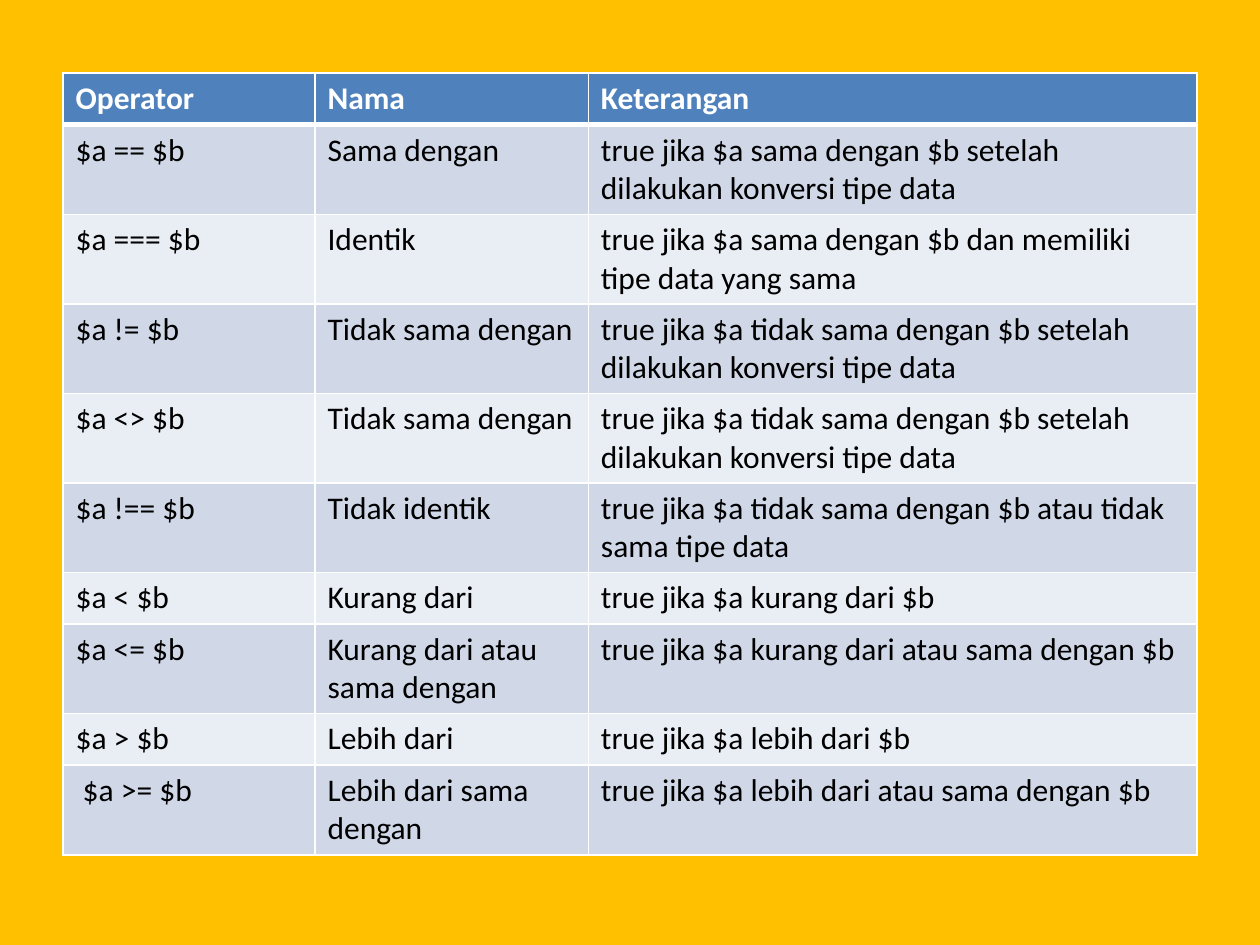
from lxml import etree
from pptx import Presentation
from pptx import util as u
from pptx.dml.color import RGBColor
from pptx.oxml.ns import qn

HEADER = ("Operator", "Nama", "Keterangan")
OPERATORS = [
    ("$a == $b", "Sama dengan", "true jika $a sama dengan $b setelah dilakukan konversi tipe data"),
    ("$a === $b", "Identik", "true jika $a sama dengan $b dan memiliki tipe data yang sama"),
    ("$a != $b", "Tidak sama dengan",
     "true jika $a tidak sama dengan $b setelah dilakukan konversi tipe data"),
    ("$a <> $b", "Tidak sama dengan",
     "true jika $a tidak sama dengan $b setelah dilakukan konversi tipe data"),
    ("$a !== $b", "Tidak identik", "true jika $a tidak sama dengan $b atau tidak sama tipe data"),
    ("$a < $b", "Kurang dari", "true jika $a kurang dari $b"),
    ("$a <= $b", "Kurang dari atau sama dengan", "true jika $a kurang dari atau sama dengan $b"),
    ("$a > $b", "Lebih dari", "true jika $a lebih dari $b"),
    (" $a >= $b", "Lebih dari sama dengan", "true jika $a lebih dari atau sama dengan $b"),
]

AMBER = RGBColor(0xFF, 0xC0, 0x00)
BLUE = RGBColor(0x4F, 0x81, 0xBD)
BANDS = (RGBColor(0xD0, 0xD8, 0xE8), RGBColor(0xE9, 0xED, 0xF4))
WHITE = RGBColor(0xFF, 0xFF, 0xFF)
BLACK = RGBColor(0x00, 0x00, 0x00)

LEFT, TOP = 0.5, 0.58
COLUMNS = (2, 2.17, 4.83)
ROW_HEIGHT = 0.41


def set_borders(cell, color, **widths):
    """Draw the cell's edges; widths maps L, R, T, B to points."""
    tc_pr = cell._tc.get_or_add_tcPr()
    for side, width in widths.items():
        ln = etree.SubElement(tc_pr, qn(f"a:ln{side}"), w=str(u.Pt(width)))
        fill = etree.SubElement(ln, qn("a:solidFill"))
        etree.SubElement(fill, qn("a:srgbClr"), val=str(color))


def write(cell, content, size=18, font="Calibri", color=BLACK, bold=False):
    r = cell.text_frame.paragraphs[0].add_run()
    r.text = content
    r.font.size, r.font.name, r.font.bold = u.Pt(size), font, bold
    r.font.color.rgb = color


prs = Presentation()
prs.slide_width, prs.slide_height = u.Inches(10), u.Inches(7.5)
slide = prs.slides.add_slide(prs.slide_layouts[6])
slide.background.fill.solid()
slide.background.fill.fore_color.rgb = AMBER

rows = [HEADER, *OPERATORS]
sp = slide.shapes.add_table(
    len(rows), len(COLUMNS), u.Inches(LEFT), u.Inches(TOP),
    u.Inches(sum(COLUMNS)), u.Inches(ROW_HEIGHT * len(rows)))
table = sp.table
for column, width in zip(table.columns, COLUMNS):
    column.width = u.Inches(width)

for i, row in enumerate(rows):
    table.rows[i].height = u.Inches(ROW_HEIGHT)
    header = i == 0
    for j, content in enumerate(row):
        cell = table.cell(i, j)
        set_borders(cell, WHITE, L=1, R=1, T=3 if i == 1 else 1, B=3 if header else 1)
        cell.fill.solid()
        cell.fill.fore_color.rgb = BLUE if header else BANDS[(i - 1) % 2]
        write(cell, content, color=WHITE if header else BLACK, bold=header)

prs.save("out.pptx")
